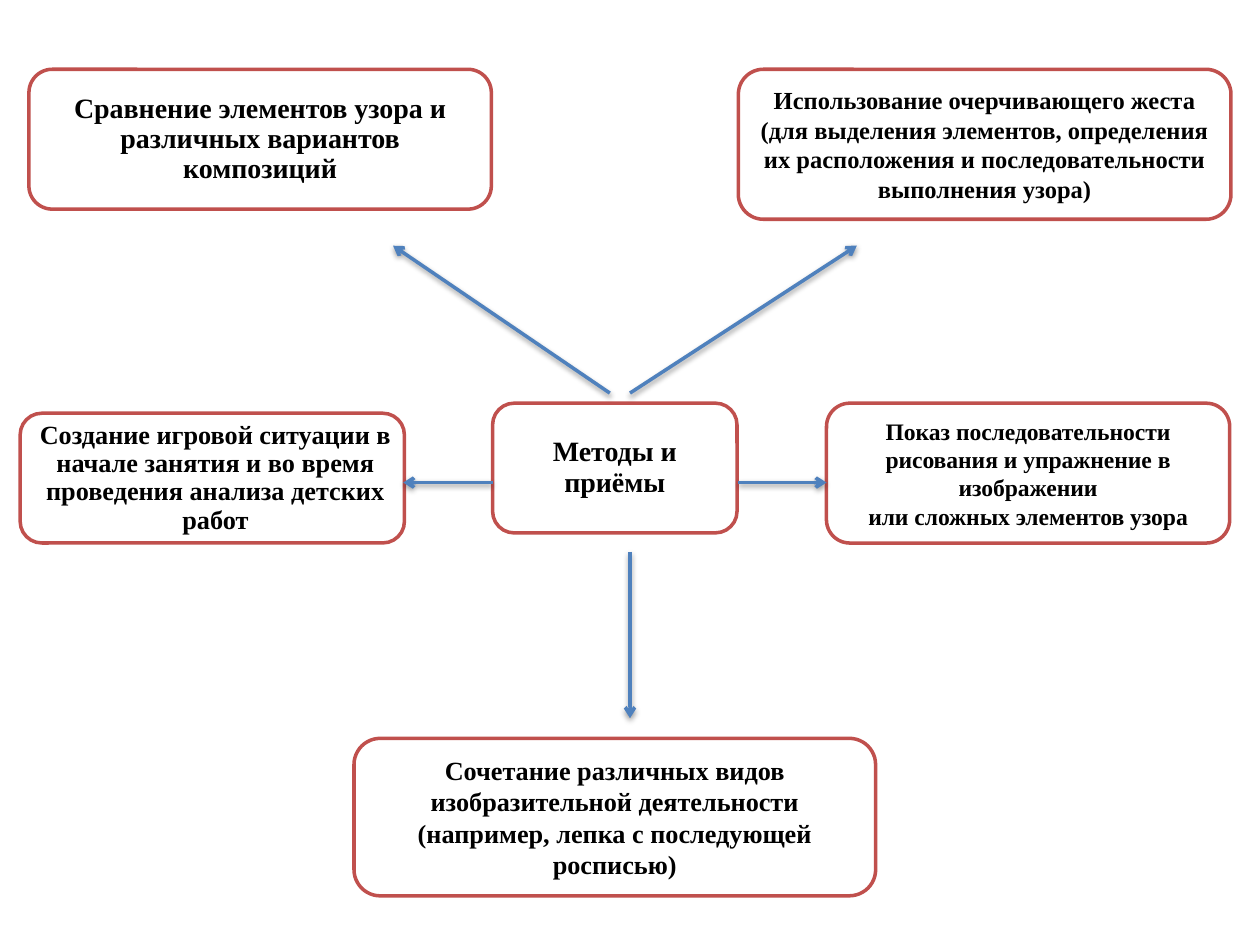
from pptx import Presentation
from pptx.dml.color import RGBColor
from pptx.enum.shapes import MSO_CONNECTOR as Connector, MSO_SHAPE as Shape
from pptx.enum.text import MSO_ANCHOR as Anchor, PP_ALIGN as Align
from pptx.oxml.ns import qn
from pptx.util import Inches, Pt
from lxml.etree import SubElement

WHITE = RGBColor(0xFF, 0xFF, 0xFF)
BLACK = RGBColor(0x00, 0x00, 0x00)
RED = RGBColor(0xC0, 0x50, 0x4D)
BLUE = RGBColor(0x4F, 0x81, 0xBD)
COLUMNS, ROWS = 100, 75


class Diagram:
    """Draws methods and arrows on a grid of 100 columns by 75 rows."""

    font = {"name": "Times New Roman", "bold": True}
    frame = {"word_wrap": True, "vertical_anchor": Anchor.MIDDLE,
             "margin_top": Inches(0.07), "margin_bottom": Inches(0.07)}
    stroke = Pt(2)

    def __init__(self, deck):
        self.column = deck.slide_width / COLUMNS
        self.row = deck.slide_height / ROWS
        self.slide = deck.slides.add_slide(deck.slide_layouts[6])

    def place(self, *lengths):
        units = (self.column, self.row) * 2
        return [round(length * unit) for length, unit in zip(lengths, units)]

    def apply(self, target, values):
        for name, value in values.items():
            setattr(target, name, value)

    def method(self, area, text, size, spacing, margins):
        box = self.slide.shapes.add_shape(Shape.ROUNDED_RECTANGLE, *self.place(*area))
        box.shadow.inherit = False
        box.fill.solid()
        box.fill.fore_color.rgb = WHITE
        box.line.color.rgb = RED
        box.line.width = self.stroke
        left, right = margins
        sides = {"margin_left": Inches(left), "margin_right": Inches(right)}
        self.apply(box.text_frame, self.frame | sides)
        box.text_frame.text = text
        for paragraph in box.text_frame.paragraphs:
            self.apply(paragraph, {"alignment": Align.CENTER, "line_spacing": spacing})
            for run in paragraph.runs:
                self.apply(run.font, self.font | {"size": Pt(size)})
                run.font.color.rgb = BLACK

    def arrow(self, start, end):
        link = self.slide.shapes.add_connector(
            Connector.STRAIGHT, *self.place(*start, *end))
        link.line.color.rgb = BLUE
        link.line.width = self.stroke
        SubElement(link.line._get_or_add_ln(), qn("a:tailEnd"), type="arrow")


METHODS = [
    ((39.1, 32, 19.4, 10.3), "Методы и приёмы", 16, 0.9, (0.07, 0.07)),
    ((65.6, 32, 32, 11.1),
     "Показ последовательности рисования и упражнение в изображении\n"
     "или сложных элементов узора", 13.5, 1.0, (0.1, 0.1)),
    ((58.6, 5.5, 39.1, 11.9),
     "Использование очерчивающего жеста (для выделения элементов, определения "
     "их расположения и последовательности выполнения узора)", 14, 1.0, (0.11, 0.11)),
    ((1.6, 32.8, 30.5, 10.3),
     "Создание игровой ситуации в начале занятия и во время проведения "
     "анализа детских работ", 15, 0.9, (0.08, 0.03)),
    ((28.1, 58.6, 41.4, 12.5),
     "Сочетание различных видов изобразительной деятельности "
     "(например, лепка с последующей росписью)", 15, 1.0, (0.12, 0.12)),
    ((2.3, 5.5, 36.7, 11.1),
     "Сравнение элементов узора и различных вариантов композиций",
     16, 0.9, (0.12, 0.12)),
]
ARROWS = [
    ((50, 31.2), (68, 19.5)),
    ((48.4, 31.2), (31.2, 19.5)),
    ((50, 43.8), (50, 57)),
    ((39.1, 38.3), (32, 38.3)),
    ((58.6, 38.3), (65.6, 38.3)),
]


def main():
    deck = Presentation()
    deck.slide_width, deck.slide_height = Inches(10), Inches(7.5)
    diagram = Diagram(deck)
    for method in METHODS:
        diagram.method(*method)
    for start, end in ARROWS:
        diagram.arrow(start, end)
    deck.save("out.pptx")


if __name__ == "__main__":
    main()
